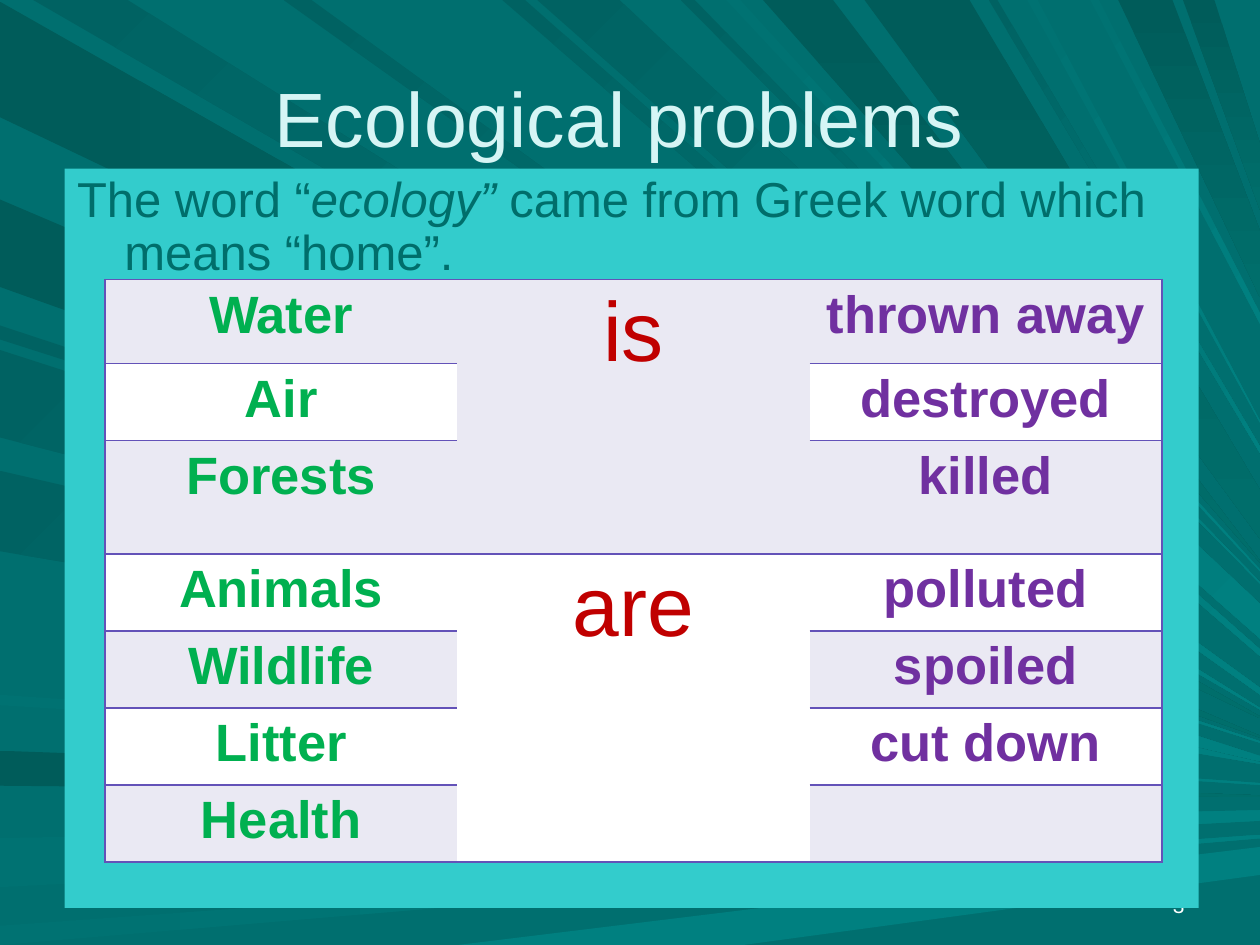
from lxml import etree
from pptx import Presentation
from pptx.dml.color import RGBColor
from pptx.enum.shapes import MSO_SHAPE
from pptx.enum.text import MSO_ANCHOR, PP_ALIGN
from pptx.oxml.ns import qn
from pptx.util import Pt

FONT = "Arial"
NO_GRID_STYLE = "{2D5ABB26-0587-4C30-8999-92F81FD0307C}"
WIDTH, HEIGHT = 720, 540

WHITE = RGBColor(0xFF, 0xFF, 0xFF)
AQUA = RGBColor(0x33, 0xCC, 0xCC)
PALE_AQUA = RGBColor(0xD6, 0xF5, 0xF5)
LAVENDER = RGBColor(0xEA, 0xE9, 0xF3)
BORDER = RGBColor(0x63, 0x52, 0xB8)
GREEN = RGBColor(0x00, 0xB0, 0x50)
RED = RGBColor(0xC0, 0x00, 0x00)
PURPLE = RGBColor(0x70, 0x30, 0xA0)
PINE = RGBColor(0x00, 0x6E, 0x6B)
DARK_PINE = RGBColor(0x00, 0x5C, 0x5A)
TEAL = RGBColor(0x00, 0x80, 0x80)
DARK_TEAL = RGBColor(0x00, 0x62, 0x62)
SOFT_TEAL = RGBColor(0x00, 0x72, 0x72)
BACKGROUND = RGBColor(0x00, 0x6F, 0x6F)

# Each ray: near and far point on its edge, height of its tip, width of its tip.
RAY_GROUPS = [
    ("left", DARK_PINE, PINE, 0, [(1, 67, 410, 1), (429, 449, 455, 1), (114, 164, 421, 1)]),
    ("top", DARK_TEAL, TEAL, 45, [
        (19, 73, 405, 1), (287, 300, 373, 4), (307, 354, 355, 20), (389, 397, 333, 1),
        (162, 178, 395, 4), (565, 570, 257, 4)]),
    ("left", DARK_TEAL, TEAL, 45, [(186, 194, 424, 1), (200, 250, 434, 4), (269, 315, 436, 1)]),
    ("left", SOFT_TEAL, TEAL, 0, [(479, 507, 466, 6), (529, 540, 478, 2), (397, 403, 448, 1)]),
    ("top", DARK_PINE, PINE, 90, [
        (436, 476, 321, 1), (494, 554, 294, 28), (639, 670, 151, 38), (676, 694, 101, 38)]),
    ("top", SOFT_TEAL, TEAL, 45, [(415, 423, 326, 1), (587, 593, 241, 1), (623, 628, 182, 6)]),
    ("bottom", TEAL, TEAL, 0, [(425, 262, 492, 16)]),
]

SUBJECTS = ["Water", "Air", "Forests", "Animals", "Wildlife", "Litter", "Health"]
PARTICIPLES = ["thrown away", "destroyed", "killed", "polluted", "spoiled", "cut down", ""]
VERBS = [("is", 0, 2), ("are", 3, 6)]
ROW_HEIGHTS = [48, 44, 63, 44, 44, 44, 44]
COLUMN_EDGES = [("L", "T", "B"), ("T", "B"), ("R", "T", "B")]


def add_run(paragraph, text, size, color, bold=False, italic=False):
    """Append one formatted run to a paragraph."""
    run = paragraph.add_run()
    run.text = text
    font = run.font
    font.name, font.size, font.bold, font.italic = FONT, Pt(size), bold, italic
    font.color.rgb = color


def add_line(slide, box, text, size, color, align, anchor):
    """Place a one-line text box."""
    frame = slide.shapes.add_textbox(*map(Pt, box)).text_frame
    frame.word_wrap = True
    frame.vertical_anchor = anchor
    frame.paragraphs[0].alignment = align
    add_run(frame.paragraphs[0], text, size, color)


def add_ray(slide, corners, start, end, angle):
    """Draw one background ray with a solid or gradient fill."""
    first, *rest = [(Pt(x), Pt(y)) for x, y in corners]
    builder = slide.shapes.build_freeform(*first)
    builder.add_line_segments(rest, close=True)
    shape = builder.convert_to_shape()
    shape.shadow.inherit = False
    shape.line.fill.background()
    if start == end:
        shape.fill.solid()
        shape.fill.fore_color.rgb = start
        return
    shape.fill.gradient()
    shape.fill.gradient_angle = (360 - angle) % 360
    for stop, color in zip(shape.fill.gradient_stops, (start, end)):
        stop.color.rgb = color


def add_background(slide, width, height):
    """Fill the background and fan the rays towards the right side."""
    slide.background.fill.solid()
    slide.background.fill.fore_color.rgb = BACKGROUND
    for side, start, end, angle, rays in RAY_GROUPS:
        for near, far, tip, thickness in rays:
            if side == "left":
                base = [(0, far), (0, near)]
            else:
                edge = 0 if side == "top" else height
                base = [(near, edge), (far, edge)]
            tips = [(width, tip - thickness / 2), (width, tip + thickness / 2)]
            add_ray(slide, base + tips, start, end, angle)


def add_panel(slide, box):
    """Place the aqua panel with the introductory sentence."""
    shape = slide.shapes.add_shape(MSO_SHAPE.RECTANGLE, *map(Pt, box))
    shape.shadow.inherit = False
    shape.fill.solid()
    shape.fill.fore_color.rgb = AQUA
    shape.line.fill.background()
    frame = shape.text_frame
    frame.word_wrap = True
    frame.vertical_anchor = MSO_ANCHOR.TOP
    paragraph = frame.paragraphs[0]
    paragraph.alignment = PP_ALIGN.LEFT
    paragraph.line_spacing = 0.9
    properties = paragraph._p.get_or_add_pPr()
    properties.set("marL", str(Pt(27)))
    properties.set("indent", str(-Pt(27)))
    add_run(paragraph, "The word “", 28, PINE)
    add_run(paragraph, "ecology”", 28, PINE, italic=True)
    add_run(paragraph, " came from Greek word which means “home”.", 28, PINE)


def add_borders(cell, edges):
    """Draw the named cell edges."""
    properties = cell._tc.get_or_add_tcPr()
    for edge in edges:
        line = etree.SubElement(properties, qn(f"a:ln{edge}"), w=str(Pt(1)))
        fill = etree.SubElement(line, qn("a:solidFill"))
        etree.SubElement(fill, qn("a:srgbClr"), val=str(BORDER))


def fill_cell(cell, text, size, color, bold):
    """Write centred text into a cell."""
    paragraph = cell.text_frame.paragraphs[0]
    paragraph.alignment = PP_ALIGN.CENTER
    if text:
        add_run(paragraph, text, size, color, bold)


def add_word_table(slide, box):
    """Place the table of subjects, verbs and participles."""
    frame = slide.shapes.add_table(len(SUBJECTS), len(COLUMN_EDGES), *map(Pt, box))
    table = frame.table
    table.first_row = table.horz_banding = False
    table._tbl.tblPr.find(qn("a:tableStyleId")).text = NO_GRID_STYLE
    for column in table.columns:
        column.width = Pt(box[2] / len(COLUMN_EDGES))
    for row, height in zip(table.rows, ROW_HEIGHTS):
        row.height = Pt(height)
    for text, top, bottom in VERBS:
        table.cell(top, 1).merge(table.cell(bottom, 1))
        fill_cell(table.cell(top, 1), text, 48, RED, False)
    for index, (subject, participle) in enumerate(zip(SUBJECTS, PARTICIPLES)):
        fill_cell(table.cell(index, 0), subject, 30, GREEN, True)
        fill_cell(table.cell(index, 2), participle, 30, PURPLE, True)
        for column, edges in enumerate(COLUMN_EDGES):
            cell = table.cell(index, column)
            if not cell.is_spanned:
                add_borders(cell, edges)
            cell.fill.solid()
            cell.fill.fore_color.rgb = WHITE if index % 2 else LAVENDER


def main():
    """Build and save the presentation."""
    presentation = Presentation()
    presentation.slide_width, presentation.slide_height = Pt(WIDTH), Pt(HEIGHT)
    slide = presentation.slides.add_slide(presentation.slide_layouts[6])
    add_background(slide, WIDTH, HEIGHT)
    add_line(slide, (516, 492, 168, 36), "3", 12, WHITE, PP_ALIGN.RIGHT, MSO_ANCHOR.BOTTOM)
    add_panel(slide, (37, 96.3, 648, 422.5))
    add_line(slide, (36, 21.6, 648, 90), "Ecological problems ", 44, PALE_AQUA,
             PP_ALIGN.CENTER, MSO_ANCHOR.MIDDLE)
    add_word_table(slide, (60, 159.8, 604, 331))
    presentation.save("out.pptx")


if __name__ == "__main__":
    main()
